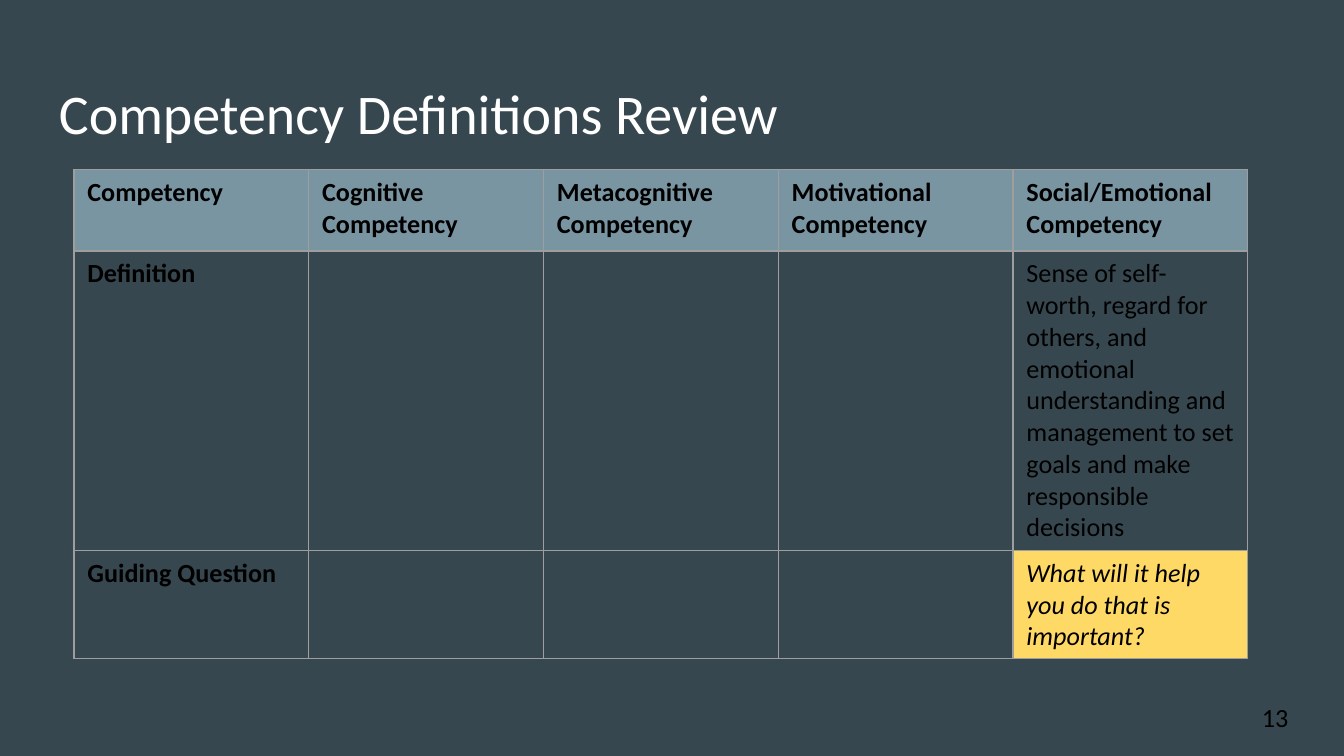
from dataclasses import dataclass

from lxml.etree import SubElement
from pptx import Presentation
from pptx.dml.color import RGBColor as RGB
from pptx.enum.text import MSO_ANCHOR as Anchor
from pptx.oxml.ns import qn
from pptx.util import Inches, Pt


@dataclass(frozen=True)
class Theme:
    font: str = "Calibri"
    title_size: int = 30
    body_size: int = 14
    background: str = "37474F"
    light: str = "FFFFFF"
    dark: str = "000000"
    header: str = "7A95A2"
    highlight: str = "FFD966"
    border: str = "9E9E9E"
    border_width: float = 0.75


class SlideBuilder:
    COLUMNS = 100

    def __init__(self, prs, theme):
        self.theme = theme
        self.unit = prs.slide_width / self.COLUMNS
        self.s = prs.slides.add_slide(prs.slide_layouts[6])
        self.paint(self.s.background.fill, theme.background)

    def paint(self, fill, color):
        fill.solid()
        fill.fore_color.rgb = RGB.from_string(color)

    def box(self, *grid):
        return [round(n * self.unit) for n in grid]

    def style(self, p, size, color, bold=False, italic=False):
        p.font.name = self.theme.font
        p.font.size = Pt(size)
        p.font.bold, p.font.italic = bold, italic
        p.font.color.rgb = RGB.from_string(color)

    def text(self, text, grid, size, color, anchor=Anchor.TOP):
        tf = self.s.shapes.add_textbox(*self.box(*grid)).text_frame
        tf.word_wrap = True
        tf.vertical_anchor = anchor
        tf.margin_left = tf.margin_right = Inches(0.1)
        tf.margin_top = tf.margin_bottom = Inches(0.1)
        p = tf.paragraphs[0]
        p.text = text
        self.style(p, size, color)

    def outline(self, cell):
        tc_pr = cell._tc.get_or_add_tcPr()
        for side in ("lnL", "lnR", "lnT", "lnB"):
            ln = SubElement(tc_pr, qn(f"a:{side}"), w=str(Pt(self.theme.border_width)))
            solid = SubElement(ln, qn("a:solidFill"))
            SubElement(solid, qn("a:srgbClr"), val=self.theme.border)

    def cell(self, cell, text, fill=None, bold=False, italic=False):
        self.outline(cell)
        if fill:
            self.paint(cell.fill, fill)
        else:
            cell.fill.background()
        p = cell.text_frame.paragraphs[0]
        p.text = text
        self.style(p, self.theme.body_size, self.theme.dark, bold, italic)

    def table(self, rows, grid, heights):
        last = len(rows) - 1, len(rows[0]) - 1
        table = self.s.shapes.add_table(len(rows), len(rows[0]), *self.box(*grid)).table
        for row, height in zip(table.rows, self.box(*heights)):
            row.height = height
        for i, texts in enumerate(rows):
            for j, text in enumerate(texts):
                final = (i, j) == last
                fill = self.theme.header if i == 0 else self.theme.highlight if final else None
                self.cell(table.cell(i, j), text, fill, bold=i == 0 or j == 0, italic=final)


def main():
    prs = Presentation()
    prs.slide_width = Inches(10)
    prs.slide_height = prs.slide_width * 9 // 16
    theme = Theme()
    slide = SlideBuilder(prs, theme)

    slide.text("Competency Definitions Review", (3.4, 4.87, 93.2, 6.3),
               theme.title_size, theme.light)
    slide.text("13", (92.9, 51.2, 6, 4.3),
               theme.body_size, theme.dark, Anchor.MIDDLE)

    blanks = [""] * 3
    rows = [
        ["Competency", "Cognitive Competency", "Metacognitive Competency",
         "Motivational Competency", "Social/Emotional Competency"],
        ["Definition", *blanks,
         "Sense of self-worth, regard for others, and emotional understanding "
         "and management to set goals and make responsible decisions"],
        ["Guiding Question", *blanks, "What will it help you do that is important?"],
    ]
    slide.table(rows, (5.5, 12.63, 87.36, 36.4), (6.05, 22.3, 8.05))
    prs.save("out.pptx")


if __name__ == "__main__":
    main()
